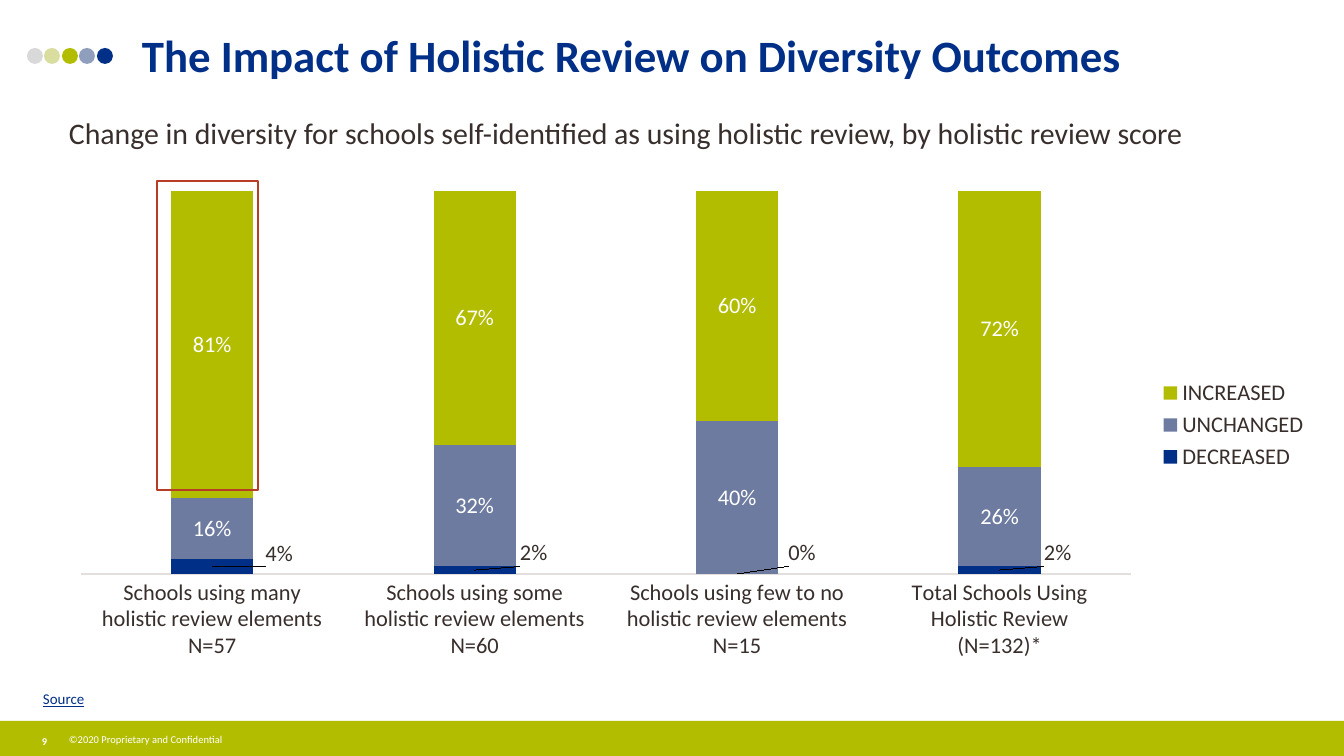
from pptx import Presentation
from pptx import util as u
from pptx.chart.data import CategoryChartData
from pptx.dml.color import RGBColor
from pptx.enum import chart as ch, shapes, text as tx
from pptx.oxml import parse_xml
from pptx.oxml.ns import nsdecls, qn
from lxml import etree

SCALE = 914400 / 134.4
FACE = "Calibri"
NAVY, LIME, SLATE = "002F87", "B3BD00", "6E7BA0"
WHITE, INK, RULE, RED = "FFFFFF", "382F2C", "E4DEDD", "B73D25"


def px(n):
    return u.Emu(round(n * SCALE))


def rgb(code):
    return RGBColor.from_string(code)


def style(font, size, color, bold=False, line=False):
    font.name = FACE
    font.size = u.Pt(size)
    font.bold = bold
    font.underline = line
    font.color.rgb = rgb(color)


def write(slide, box, words, size=16, color=INK, bold=False, line=False,
          align=tx.PP_ALIGN.LEFT, anchor=tx.MSO_ANCHOR.TOP, wrap=True, inset=(13, 7)):
    frame = slide.shapes.add_textbox(*map(px, box)).text_frame
    frame.word_wrap = wrap
    frame.vertical_anchor = anchor
    frame.margin_left = frame.margin_right = px(inset[0])
    frame.margin_top = frame.margin_bottom = px(inset[1])
    para = frame.paragraphs[0]
    para.alignment = align
    run = para.add_run()
    run.text = words
    style(run.font, size, color, bold, line)


def draw(slide, kind, box, fill=None, edge=None, alpha=None):
    shape = slide.shapes.add_shape(kind, *map(px, box))
    shape.shadow.inherit = False
    if fill:
        shape.fill.solid()
        shape.fill.fore_color.rgb = rgb(fill)
    else:
        shape.fill.background()
    if edge:
        shape.line.color.rgb = rgb(edge)
        shape.line.width = u.Pt(1.5)
    else:
        shape.line.fill.background()
    if alpha:
        tint = shape.fill._xPr.find(".//" + qn("a:srgbClr"))
        etree.SubElement(tint, qn("a:alpha")).set("val", str(alpha * 1000))


def footer(slide, box):
    x, y, w, h = box
    draw(slide, shapes.MSO_SHAPE.RECTANGLE, box, LIME)
    write(slide, (x + 56, y + 6, 183, 27), "©2020 Proprietary and Confidential",
          size=5.6, color=WHITE, wrap=False)
    write(slide, (x + 15, y + 9, 59, 22), "9", size=5.6, color=WHITE, bold=True,
          align=tx.PP_ALIGN.CENTER, anchor=tx.MSO_ANCHOR.MIDDLE, inset=(9, 5))


def header(slide, box):
    x, y, w, h = box
    dots = [("D9D9D9", None), ("B4BD42", 50), (LIME, None), ("213F7A", 50), (NAVY, None)]
    for i, (color, alpha) in enumerate(dots):
        draw(slide, shapes.MSO_SHAPE.OVAL, (x + i * 35 // 2, y + 22, 16, 16),
             color, alpha=alpha)
    write(slide, (x + 102, y, w - 102, h),
          "The Impact of Holistic Review on Diversity Outcomes",
          size=24, color=NAVY, bold=True, anchor=tx.MSO_ANCHOR.MIDDLE)


def place(parent, index, x, y, w=None, h=None):
    size = "" if w is None else f'<c:w val="{w}"/><c:h val="{h}"/>'
    mode = "" if w is None else (
        '<c:layoutTarget val="inner"/><c:xMode val="edge"/><c:yMode val="edge"/>')
    old = parent.find(qn("c:layout"))
    if old is not None:
        parent.remove(old)
    parent.insert(index, parse_xml(
        f'<c:layout {nsdecls("c")}><c:manualLayout>{mode}'
        f'<c:x val="{x}"/><c:y val="{y}"/>{size}</c:manualLayout></c:layout>'))


def graph(slide, box):
    x, y, w, h = box
    data = CategoryChartData(number_format="0%")
    data.categories = [
        "Schools using many\nholistic review elements\nN=57",
        "Schools using some\nholistic review elements\nN=60",
        "Schools using few to no\nholistic review elements\nN=15",
        "Total Schools Using\nHolistic Review\n(N=132)*",
    ]
    data.add_series("DECREASED", (0.04, 0.02, 0, 0.02))
    data.add_series("UNCHANGED", (0.16, 0.32, 0.4, 0.26))
    data.add_series("INCREASED", (0.81, 0.67, 0.6, 0.72))
    chart = slide.shapes.add_chart(
        ch.XL_CHART_TYPE.COLUMN_STACKED_100, *map(px, box), data).chart
    style(chart.font, 10, INK)
    chart.has_title = False
    chart.has_legend = True
    chart.legend.position = ch.XL_LEGEND_POSITION.RIGHT
    chart.legend.include_in_layout = False
    style(chart.legend.font, 12, INK)

    axis = chart.category_axis
    axis.major_tick_mark = ch.XL_TICK_MARK.NONE
    axis.format.line.color.rgb = rgb(RULE)
    axis.format.line.width = u.Pt(0.75)
    style(axis.tick_labels.font, 12, INK)
    chart.value_axis.has_major_gridlines = False
    chart.value_axis.maximum_scale = 1
    chart.value_axis.visible = False

    plot = chart.plots[0]
    plot.gap_width = 219
    plot.overlap = 100
    plot.vary_by_categories = False
    for series, color in zip(plot.series, (NAVY, SLATE, LIME)):
        series.format.fill.solid()
        series.format.fill.fore_color.rgb = rgb(color)
        labels = series.data_labels
        labels.show_value = True
        labels.number_format = "0%"
        labels.number_format_is_linked = False
        style(labels.font, 12, WHITE)

    shifts = [(67, -13), (59, -17), (65, -21), (58, -17)]
    for i, (dx, dy) in enumerate(shifts):
        label = plot.series[0].points[i].data_label
        style(label.font, 12, INK)
        mark = plot.series[0].data_labels._element.findall(qn("c:dLbl"))[i]
        place(mark, 1, dx / w, dy / h)
    area = chart._chartSpace.find(".//" + qn("c:plotArea"))
    place(area, 0, 25 / w, 10 / h, 1050 / w, 383 / h)
    draw(slide, shapes.MSO_SHAPE.RECTANGLE, (x + 101, y, 101, 309), edge=RED)


def main():
    deck = Presentation()
    deck.slide_width, deck.slide_height = px(1344), px(756)
    slide = deck.slides.add_slide(deck.slide_layouts[6])
    footer(slide, (0, 721, 1344, 35))
    header(slide, (27, 26, 1250, 58))
    write(slide, (56, 108, 1232, 50),
          "Change in diversity for schools self-identified as using holistic review, "
          "by holistic review score")
    graph(slide, (56, 181, 1266, 488))
    write(slide, (30, 683, 69, 32), "Source", size=8, color=NAVY, line=True, wrap=False)
    deck.save("out.pptx")


if __name__ == "__main__":
    main()
